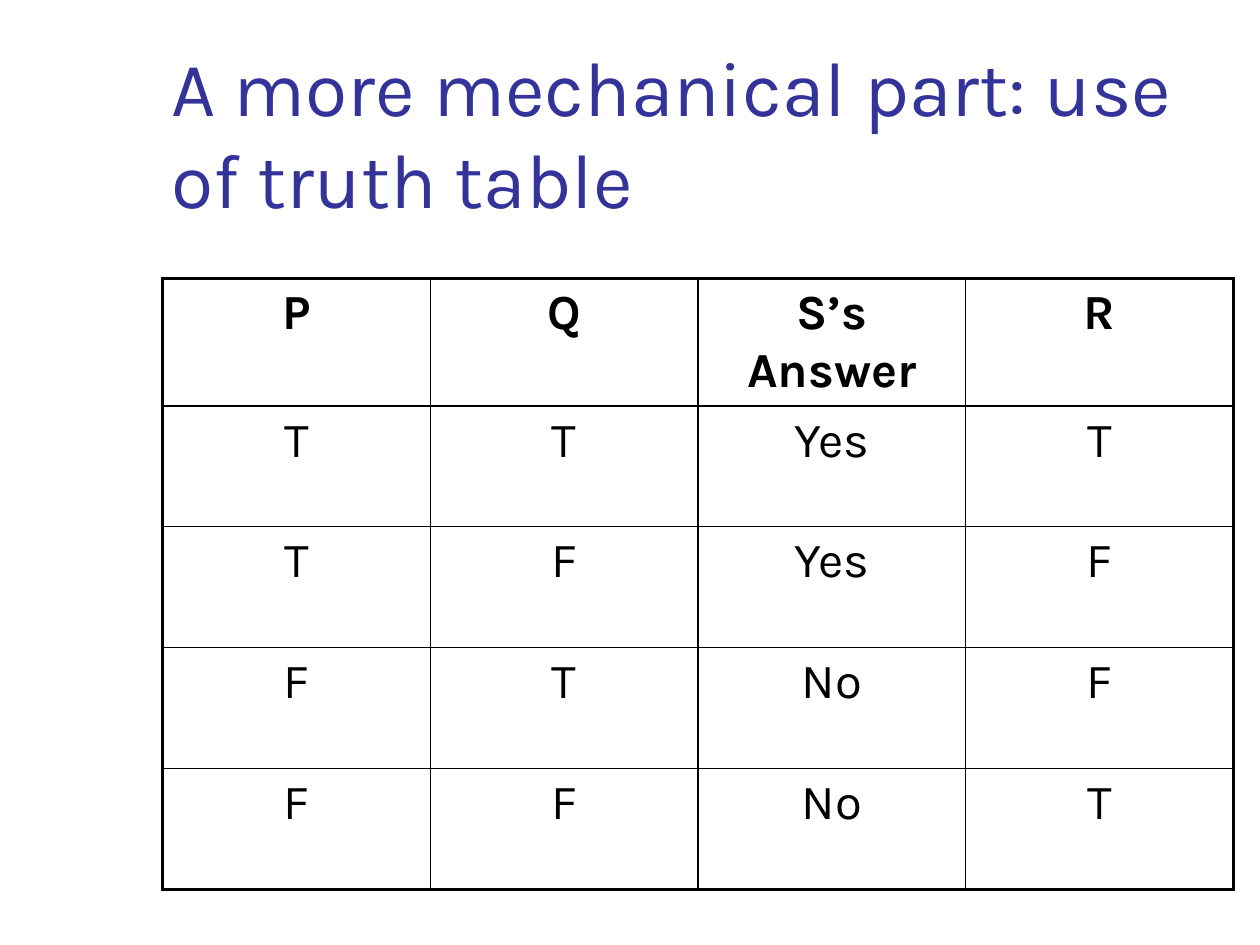
from pptx import Presentation
from pptx import util as u
from pptx.dml.color import RGBColor
from pptx.enum import text
from pptx.oxml import ns, xmlchemy

FONT = "Karla"
INDIGO = RGBColor(0x33, 0x33, 0x99)
BLACK = RGBColor(0, 0, 0)
THIN, THICK = u.Pt(1), u.Pt(2.25)

TRUTH_TABLE = [
    ["P", "Q", "S’s Answer", "R"],
    ["T", "T", "Yes", "T"],
    ["T", "F", "Yes", "F"],
    ["F", "T", "No", "F"],
    ["F", "F", "No", "T"],
]


def add_span(para, words, size, color, bold=False):
    span = para.add_run()
    span.text = words
    span.font.name = FONT
    span.font.size = u.Pt(size)
    span.font.bold = bold
    span.font.color.rgb = color


def set_border(cell, side, width):
    line = xmlchemy.OxmlElement(f"a:ln{side}")
    line.set("w", str(width))
    fill = xmlchemy.OxmlElement("a:solidFill")
    color = xmlchemy.OxmlElement("a:srgbClr")
    color.set("val", str(BLACK))
    fill.append(color)
    line.append(fill)
    cell._tc.get_or_add_tcPr().append(line)


def place_title(page, left, top, width, height):
    title = page.shapes.title
    title.left, title.top, title.width, title.height = left, top, width, height
    frame = title.text_frame
    frame.word_wrap = True
    frame.auto_size = text.MSO_AUTO_SIZE.NONE
    frame.vertical_anchor = text.MSO_ANCHOR.BOTTOM
    para = frame.paragraphs[0]
    para.alignment = text.PP_ALIGN.LEFT
    add_span(para, "A more mechanical part: use of truth table", 44, INDIGO)


def place_truth_table(page, left, top, width, height):
    rows, cols = len(TRUTH_TABLE), len(TRUTH_TABLE[0])
    table = page.shapes.add_table(rows, cols, left, top, width, height).table
    table.first_row = table.horz_banding = False
    for r, values in enumerate(TRUTH_TABLE):
        for c, value in enumerate(values):
            cell = table.cell(r, c)
            outer_sides = {"L": c == 0, "R": c == cols - 1,
                           "T": r == 0, "B": r == rows - 1}
            for side, outer in outer_sides.items():
                set_border(cell, side, THICK if outer else THIN)
            cell.fill.background()
            para = cell.text_frame.paragraphs[0]
            para.alignment = text.PP_ALIGN.CENTER
            add_span(para, value, 28, BLACK, bold=r == 0)


def main():
    deck = Presentation()
    deck.slide_width, deck.slide_height = u.Inches(10), u.Inches(7.5)
    page = deck.slides.add_slide(deck.slide_layouts[5])
    place_title(page, u.Inches(1.26), u.Inches(0.23), u.Inches(8.52), u.Inches(1.6))
    place_truth_table(page, u.Inches(1.29), u.Inches(2.21), u.Inches(8.5), u.Inches(4.8))
    deck.save("out.pptx")


if __name__ == "__main__":
    main()
